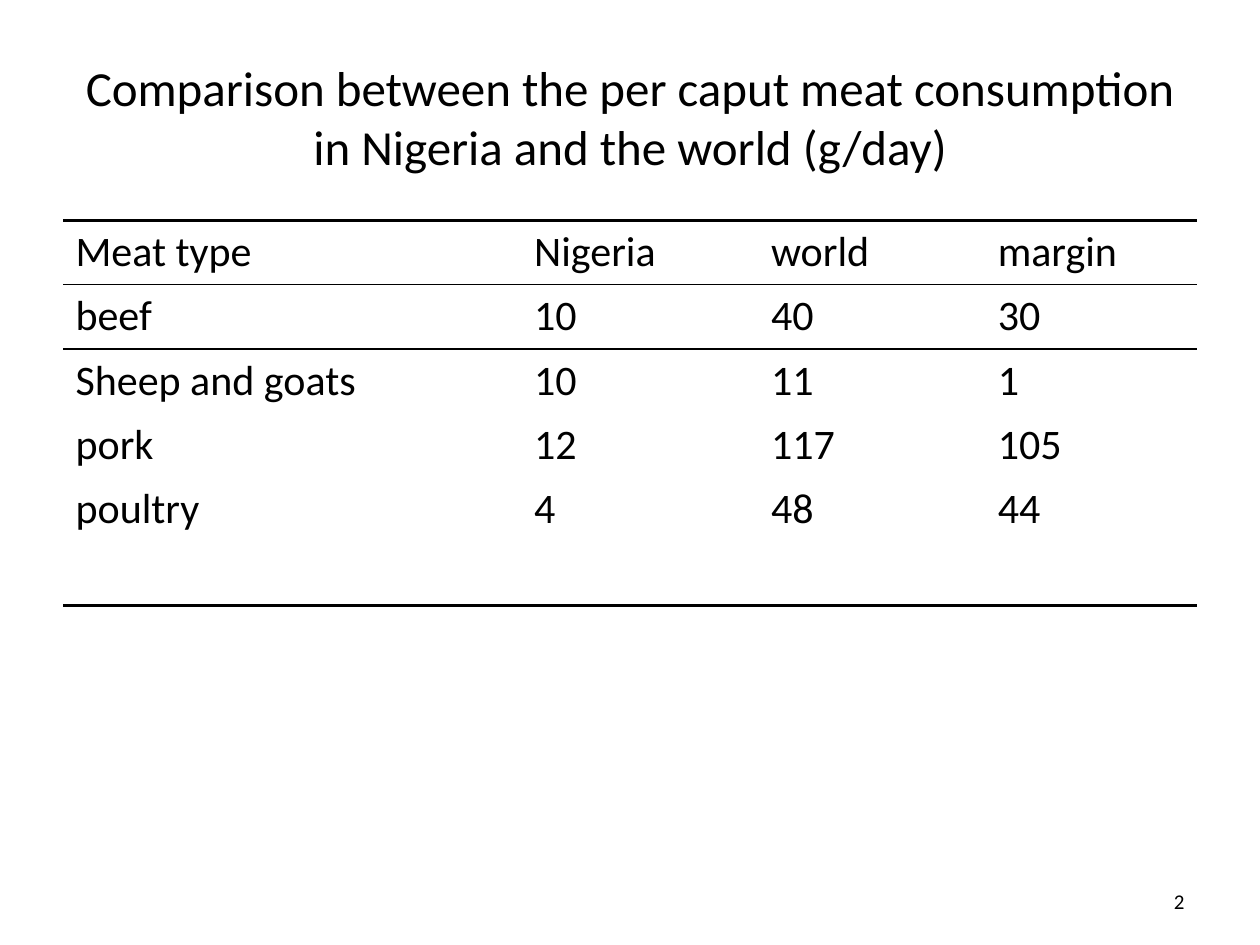
from dataclasses import dataclass

from lxml import etree
from pptx import Presentation
from pptx import util as u
from pptx.dml.color import RGBColor
from pptx.enum import text
from pptx.oxml.ns import qn


@dataclass(frozen=True)
class Theme:
    font: str = "Calibri"
    ink: str = "000000"
    paper: str = "FFFFFF"
    title_size: int = 28
    table_size: int = 24
    number_size: int = 12
    heavy_rule: int = 2
    thin_rule: int = 1


class SlideBuilder:
    def __init__(self, slide, theme):
        self.slide = slide
        self.theme = theme

    def add_run(self, paragraph, words, size):
        run = paragraph.add_run()
        run.text = words
        run.font.name = self.theme.font
        run.font.size = u.Pt(size)
        run.font.color.rgb = RGBColor.from_string(self.theme.ink)

    def fill_frame(self, shape, words, size, alignment):
        frame = shape.text_frame
        frame.word_wrap = True
        frame.auto_size = text.MSO_AUTO_SIZE.NONE
        frame.vertical_anchor = text.MSO_ANCHOR.MIDDLE
        paragraph = frame.paragraphs[0]
        paragraph.alignment = alignment
        self.add_run(paragraph, words, size)

    def title(self, words, left, top, width, height):
        shape = self.slide.shapes.title
        shape.left, shape.top = u.Inches(left), u.Inches(top)
        shape.width, shape.height = u.Inches(width), u.Inches(height)
        self.fill_frame(shape, words, self.theme.title_size, text.PP_ALIGN.CENTER)

    def slide_number(self, words, left, top, width, height):
        shape = self.slide.shapes.add_textbox(*map(u.Inches, (left, top, width, height)))
        self.fill_frame(shape, words, self.theme.number_size, text.PP_ALIGN.RIGHT)

    def border(self, cell, side, weight):
        properties = cell._tc.get_or_add_tcPr()
        line = etree.SubElement(properties, qn(f"a:ln{side}"), w=str(u.Pt(weight)))
        if weight:
            fill = etree.SubElement(line, qn("a:solidFill"))
            etree.SubElement(fill, qn("a:srgbClr"), val=self.theme.ink)
        else:
            etree.SubElement(line, qn("a:noFill"))

    def table(self, rows, rules, left, top, column_widths, row_height):
        """Draw rows; rules holds the line weight above each row and below the last."""
        shape = self.slide.shapes.add_table(
            len(rows), len(column_widths), u.Inches(left), u.Inches(top),
            u.Inches(sum(column_widths)), u.Inches(row_height * len(rows)))
        table = shape.table
        table.horz_banding = False
        table.first_row = False
        for column, width in zip(table.columns, column_widths):
            column.width = u.Inches(width)
        for index, values in enumerate(rows):
            table.rows[index].height = u.Inches(row_height)
            for cell, value in zip(table.rows[index].cells, values):
                weights = {"L": 0, "R": 0, "T": rules[index], "B": rules[index + 1]}
                for side, weight in weights.items():
                    self.border(cell, side, weight)
                cell.fill.solid()
                cell.fill.fore_color.rgb = RGBColor.from_string(self.theme.paper)
                if value:
                    self.add_run(cell.text_frame.paragraphs[0], value, self.theme.table_size)


def main():
    presentation = Presentation()
    presentation.slide_width, presentation.slide_height = u.Inches(10), u.Inches(7.5)
    theme = Theme()
    title_only = presentation.slide_layouts[5]
    builder = SlideBuilder(presentation.slides.add_slide(title_only), theme)

    # Title
    builder.title("Comparison between the per caput meat consumption "
                  "in Nigeria and the world (g/day)", 0.5, 0.3, 9, 1.25)

    # Consumption table, closed by an empty row
    consumption = [
        ("Meat type", "Nigeria", "world", "margin"),
        ("beef", "10", "40", "30"),
        ("Sheep and goats", "10", "11", "1"),
        ("pork", "12", "117", "105"),
        ("poultry", "4", "48", "44"),
        ("", "", "", ""),
    ]
    rules = [theme.heavy_rule, theme.thin_rule, theme.thin_rule, 0, 0, 0, theme.heavy_rule]
    builder.table(consumption, rules, 0.5, 1.75, (3.64, 1.88, 1.8, 1.68), 0.51)

    # Slide number
    builder.slide_number("2", 7.17, 6.95, 2.33, 0.4)

    presentation.save("out.pptx")


if __name__ == "__main__":
    main()
